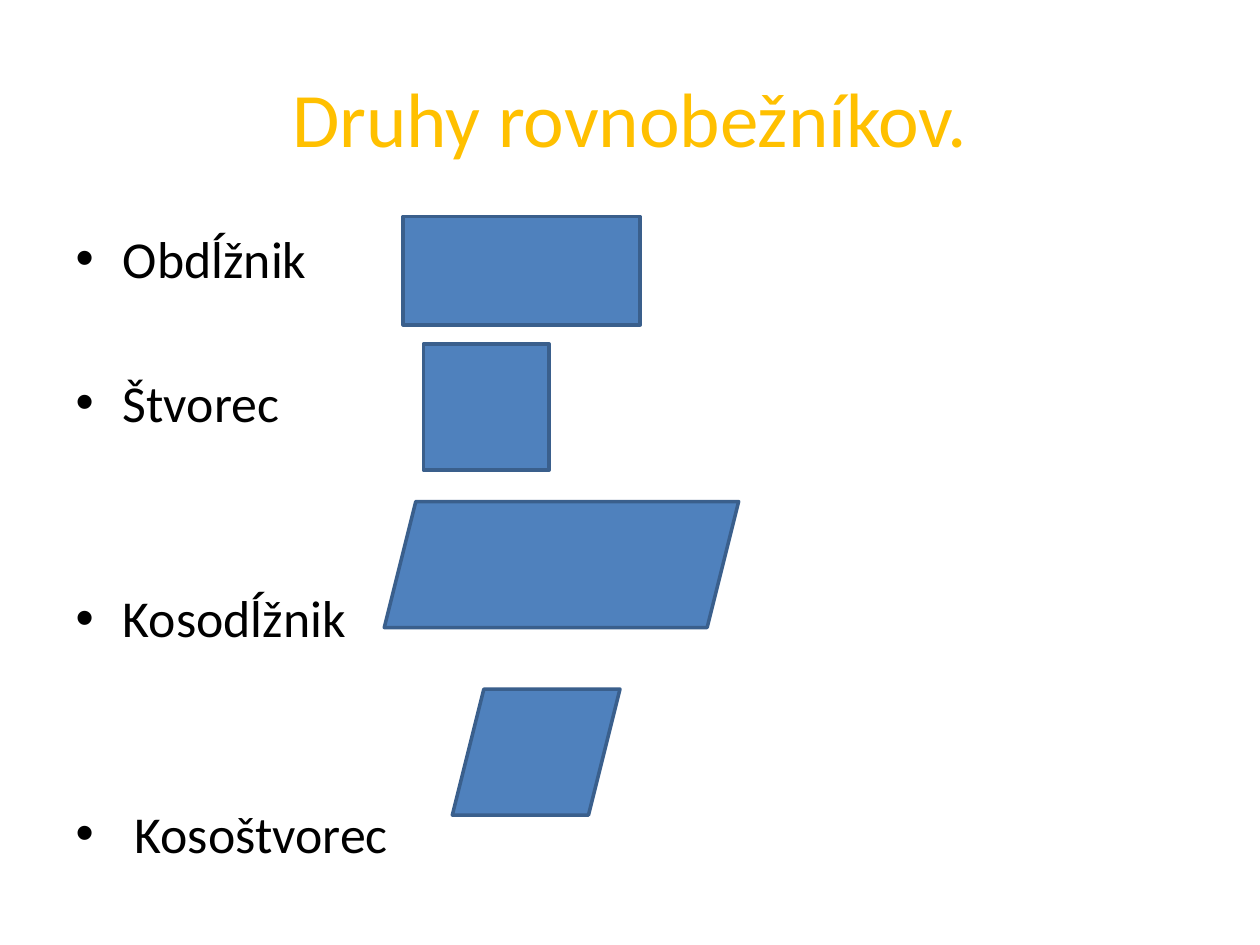
from pptx import Presentation
from pptx.dml.color import RGBColor
from pptx.enum.shapes import MSO_SHAPE
from pptx.enum.text import MSO_ANCHOR, MSO_AUTO_SIZE, PP_ALIGN
from pptx.util import Pt

TITLE_FORMAT = {"name": "Calibri", "size": Pt(44)}
BODY_FORMAT = {"name": "Calibri", "size": Pt(29.6)}
LINE_PITCH = 41.3
FIRST_GAP = 5.2

# Name and the number of lines it stands below the previous name
KINDS = [("Obdĺžnik", 0), ("Štvorec", 2), ("Kosodĺžnik", 3), (" Kosoštvorec", 3)]

# Preset, left, top, width, height in points
FIGURES = [
    (MSO_SHAPE.RECTANGLE, 230.4, 123.8, 135.4, 61.9),
    (MSO_SHAPE.RECTANGLE, 241.9, 196.6, 72, 72),
    (MSO_SHAPE.PARALLELOGRAM, 219.6, 286.6, 202.5, 72),
    (MSO_SHAPE.PARALLELOGRAM, 258.5, 393.8, 95.8, 72),
]


def color(hex_string):
    return RGBColor.from_string(hex_string)


def place(shape, left, top, width, height):
    box = {"left": left, "top": top, "width": width, "height": height}
    for name, value in box.items():
        setattr(shape, name, Pt(value))


def write(paragraph, text, font_format, hex_string):
    run = paragraph.add_run()
    run.text = text
    for name, value in font_format.items():
        setattr(run.font, name, value)
    run.font.color.rgb = color(hex_string)


def add_title(slide, text):
    title = slide.shapes.title
    place(title, 36, 21.6, 648, 90)
    title.text_frame.vertical_anchor = MSO_ANCHOR.MIDDLE
    paragraph = title.text_frame.paragraphs[0]
    paragraph.alignment = PP_ALIGN.CENTER
    write(paragraph, text, TITLE_FORMAT, "FFC000")


def add_list(slide, items):
    body = slide.placeholders[1]
    place(body, 36, 126, 648, 356.4)
    frame = body.text_frame
    frame.auto_size = MSO_AUTO_SIZE.NONE
    for index, (text, lines) in enumerate(items):
        paragraph = frame.add_paragraph() if index else frame.paragraphs[0]
        gap = FIRST_GAP + (lines - 1) * LINE_PITCH if lines else 0
        paragraph.space_before = Pt(gap)
        write(paragraph, text, BODY_FORMAT, "000000")


def add_figure(slide, preset, left, top, width, height):
    shape = slide.shapes.add_shape(preset, Pt(left), Pt(top), Pt(width), Pt(height))
    shape.shadow.inherit = False
    shape.fill.solid()
    shape.fill.fore_color.rgb = color("4F81BD")
    shape.line.color.rgb = color("3A5F8C")
    shape.line.width = Pt(2)


def main():
    presentation = Presentation()
    presentation.slide_width = Pt(720)
    presentation.slide_height = Pt(540)
    slide = presentation.slides.add_slide(presentation.slide_layouts[1])

    # Title and names of the parallelograms
    add_title(slide, "Druhy rovnobežníkov.")
    add_list(slide, KINDS)

    # One figure beside each name
    for figure in FIGURES:
        add_figure(slide, *figure)

    presentation.save("out.pptx")


if __name__ == "__main__":
    main()
